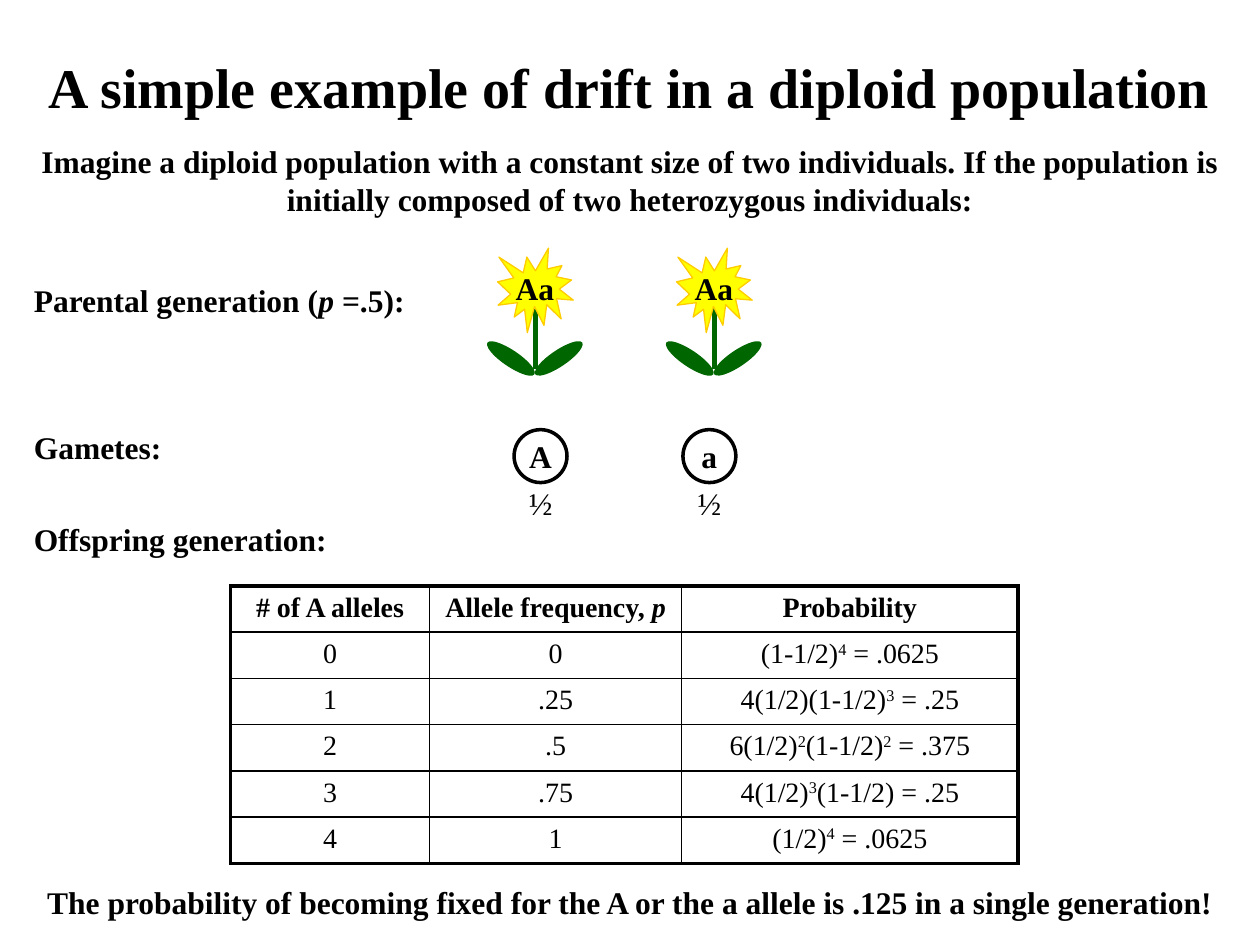
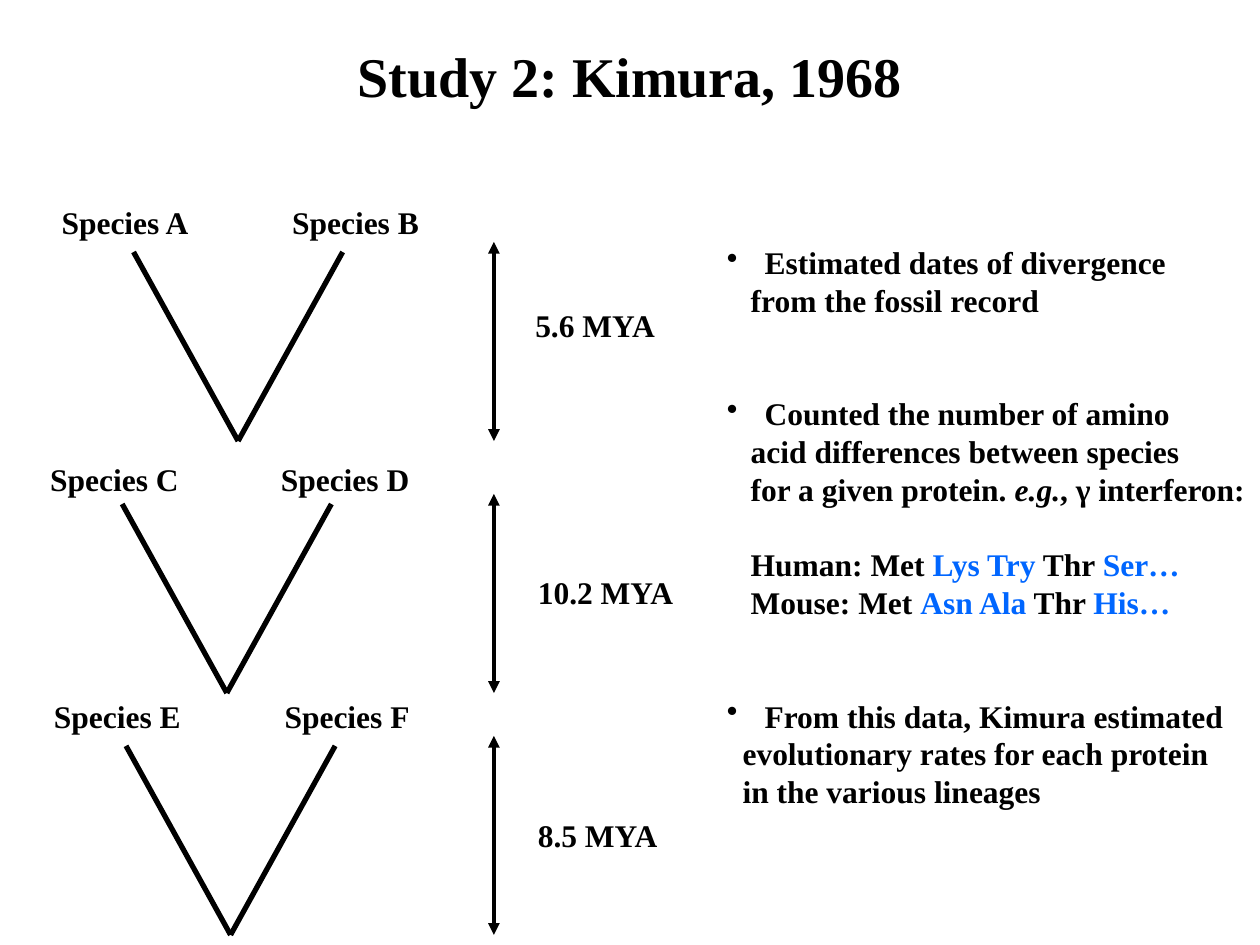
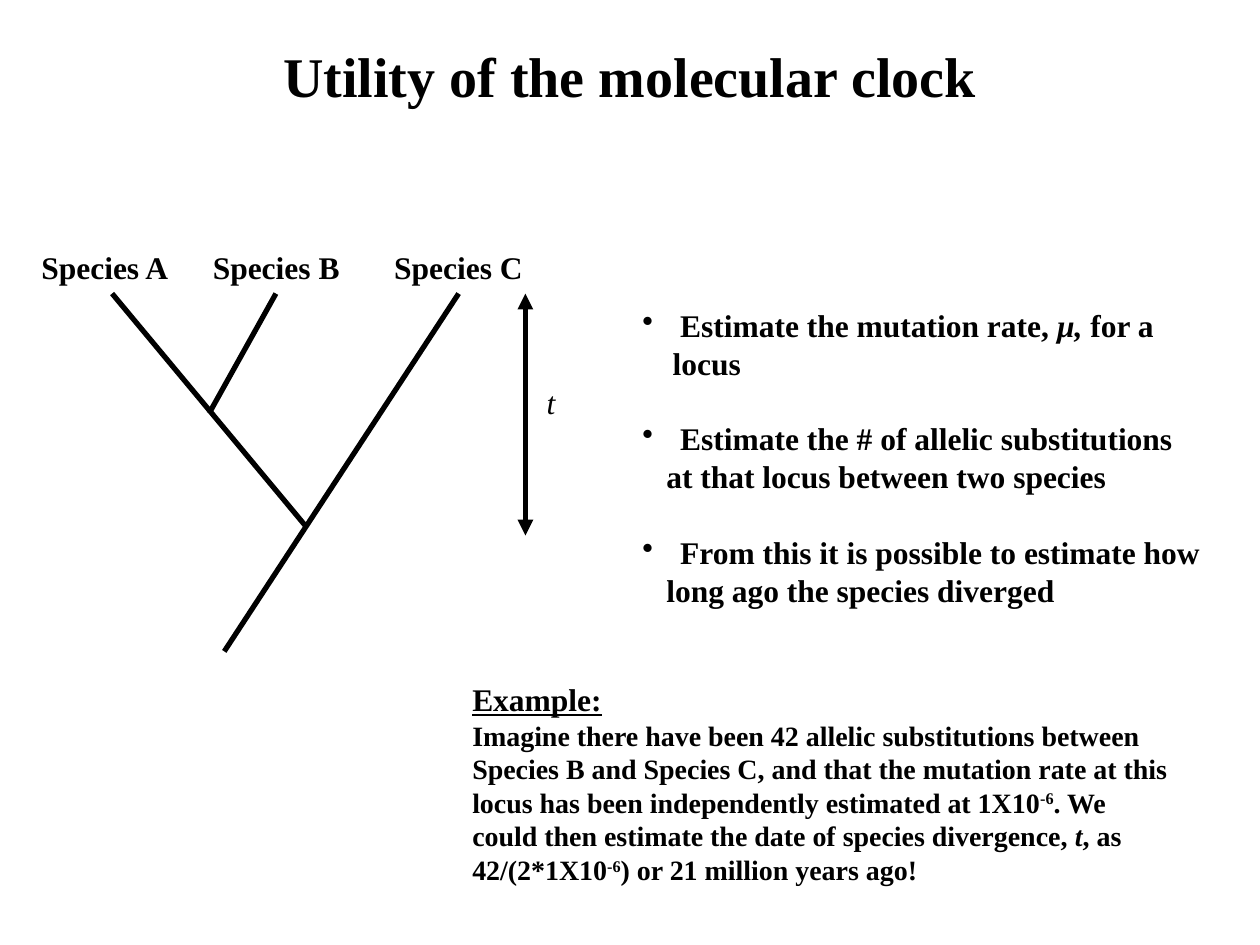
from dataclasses import dataclass

from lxml import etree
from pptx import Presentation
from pptx.dml.color import RGBColor
from pptx.enum.shapes import MSO_CONNECTOR, MSO_SHAPE
from pptx.enum.text import MSO_ANCHOR, PP_ALIGN
from pptx.oxml.ns import qn
from pptx.util import Inches, Pt

LEFT, CENTER = PP_ALIGN.LEFT, PP_ALIGN.CENTER
MIDDLE = MSO_ANCHOR.MIDDLE
OVAL, BURST = MSO_SHAPE.OVAL, MSO_SHAPE.EXPLOSION1
STRAIGHT = MSO_CONNECTOR.STRAIGHT

COLORS = {
    "ink": "000000",
    "highlight": "0066FF",
    "leaf": "006600",
    "petal": "FFFF00",
    "petal edge": "FFCC00",
}
FONT = "Times New Roman"
COLUMNS, ROWS = 100, 75
CELL = Inches(0.1)
POINTS_PER_CELL = 7.2
LINE_HEIGHT = 1.2
BODY, SMALL, TITLE = 18, 16, 32
BLANK_LINE = BODY * LINE_HEIGHT
BULLET_INDENT = 3


def cells(*lengths):
    return [round(length * CELL) for length in lengths]


def rgb(name):
    return RGBColor.from_string(COLORS[name])


@dataclass
class Para:
    """Spans are strings, or (text, mark) with mark italic, super, underline or highlight."""

    spans: list
    size: int = BODY
    bullet: bool = False
    margin: float = 0
    gap: float = 0

    def height(self):
        return (self.size * LINE_HEIGHT + self.gap) / POINTS_PER_CELL


def bullet(*spans, gap=0):
    return Para(list(spans), bullet=True, margin=BULLET_INDENT, gap=gap)


def follow(*spans, margin=1.9, gap=0):
    """A line that continues the bullet above it."""
    return Para(list(spans), margin=margin, gap=gap)


class Painter:
    def __init__(self):
        self.deck = Presentation()
        self.deck.slide_width, self.deck.slide_height = cells(COLUMNS, ROWS)
        self.slide = None

    def new_page(self, title, top=2.8):
        self.slide = self.deck.slides.add_slide(self.deck.slide_layouts[6])
        self.text(0, top, COLUMNS, [Para([title], TITLE)], align=CENTER)

    def fill_frame(self, frame, paras, bold=True, align=LEFT):
        for index, para in enumerate(paras):
            line = frame.paragraphs[0] if index == 0 else frame.add_paragraph()
            line.alignment = align
            line.space_before = Pt(para.gap)
            properties = line._p.get_or_add_pPr()
            indent = para.margin if para.bullet else 0
            margin, first = cells(para.margin, -indent)
            properties.set("marL", str(margin))
            properties.set("indent", str(first))
            if para.bullet:
                etree.SubElement(properties, qn("a:buChar")).set("char", "•")
            for span in para.spans:
                self.add_span(line, span, para.size, bold)

    def add_span(self, line, span, size, bold):
        words, mark = (span, None) if isinstance(span, str) else span
        run = line.add_run()
        run.text = words
        font = run.font
        font.name, font.size, font.bold = FONT, Pt(size), bold
        font.color.rgb = rgb("highlight" if mark == "highlight" else "ink")
        font.italic = mark == "italic"
        font.underline = mark == "underline"
        if mark == "super":
            run._r.get_or_add_rPr().set("baseline", "30000")

    def text(self, left, top, width, paras, bold=True, align=LEFT, wrap=True, lines=1):
        height = 1 + lines * sum(para.height() for para in paras)
        box = self.slide.shapes.add_textbox(*cells(left, top, width, height))
        box.text_frame.word_wrap = wrap
        self.fill_frame(box.text_frame, paras, bold, align)

    def label(self, left, top, width, *spans, bold=True, align=LEFT):
        self.text(left, top, width, [Para(list(spans))], bold, align, wrap=False)

    def shape(self, kind, left, top, width, height, fill=None, line=None,
              weight=1, turn=0, caption=None):
        shape = self.slide.shapes.add_shape(kind, *cells(left, top, width, height))
        shape.shadow.inherit = False
        shape.rotation = turn
        if fill:
            shape.fill.solid()
            shape.fill.fore_color.rgb = rgb(fill)
        else:
            shape.fill.background()
        if line:
            shape.line.color.rgb = rgb(line)
            shape.line.width = Pt(weight)
        else:
            shape.line.fill.background()
        if caption:
            frame = shape.text_frame
            frame.margin_left = frame.margin_right = 0
            frame.margin_top = frame.margin_bottom = 0
            frame.word_wrap = False
            frame.vertical_anchor = MIDDLE
            self.fill_frame(frame, [Para([caption])], align=CENTER)

    def line(self, start, end, color="ink", weight=3, arrows=False):
        connector = self.slide.shapes.add_connector(STRAIGHT, *cells(*start, *end))
        connector.line.color.rgb = rgb(color)
        connector.line.width = Pt(weight)
        if arrows:
            outline = connector.line._get_or_add_ln()
            for tag in ("a:headEnd", "a:tailEnd"):
                etree.SubElement(outline, qn(tag)).set("type", "triangle")
        etree.SubElement(connector._element.spPr, qn("a:effectLst"))

    def flower(self, stem, top, genotype):
        for offset, turn in ((-2.6, 304), (1.2, 56)):
            self.shape(OVAL, stem + offset, top + 6.5, 1.3, 4.5, "leaf", turn=turn)
        self.line((stem, top + 3.8), (stem, top + 9.6), "leaf")
        self.shape(BURST, stem - 3, top, 6, 6.7, "petal", "petal edge", 0.75,
                   caption=genotype)

    def gamete(self, left, top, allele):
        size = 4.2
        self.shape(OVAL, left, top, size, size, line="ink", weight=2, caption=allele)
        self.label(left, top + 3.8, size, "½", bold=False, align=CENTER)

    def table(self, left, top, widths, height, rows):
        frame = self.slide.shapes.add_table(
            len(rows), len(widths), *cells(left, top, sum(widths), height))
        table = frame.table
        table.first_row = table.horz_banding = False
        for column, width in zip(table.columns, cells(*widths)):
            column.width = width
        for r, (row, contents) in enumerate(zip(table.rows, rows)):
            row.height = cells(height / len(rows))[0]
            for c, spans in enumerate(contents):
                cell = table.cell(r, c)
                self.fill_frame(cell.text_frame, [Para(spans, SMALL)],
                                bold=r == 0, align=CENTER)
                self.borders(cell, L=c == 0, R=c == len(widths) - 1,
                             T=r == 0, B=r == len(rows) - 1)
                cell.fill.background()

    def borders(self, cell, **outer_sides):
        """Heavy lines on the table's outer sides, thin ones inside."""
        properties = cell._tc.get_or_add_tcPr()
        for side, outer in outer_sides.items():
            border = etree.SubElement(properties, qn(f"a:ln{side}"))
            border.set("w", str(Pt(2.25 if outer else 1)))
            fill = etree.SubElement(border, qn("a:solidFill"))
            etree.SubElement(fill, qn("a:srgbClr")).set("val", COLORS["ink"])


def draw_drift(painter):
    painter.new_page("A simple example of drift in a diploid population", top=3.7)
    painter.text(0, 10.8, COLUMNS, [Para([
        "Imagine a diploid population with a constant size of two individuals. "
        "If the population is initially composed of two heterozygous individuals:"])],
        align=CENTER, lines=2)
    for stem in (42.5, 56.7):
        painter.flower(stem, 19.7, "Aa")
    painter.label(1.7, 21.8, 32.1, "Parental generation (", ("p", "italic"), " =.5):")
    painter.label(1.7, 33.5, 12.2, "Gametes:")
    for left, allele in ((40.8, "A"), (54.2, "a")):
        painter.gamete(left, 34.1, allele)
    painter.label(1.7, 40.8, 25.3, "Offspring generation:")
    painter.table(18.3, 46.5, (15.8, 20, 26.7), 22, [
        [["# of A alleles"], ["Allele frequency, ", ("p", "italic")], ["Probability"]],
        [["0"], ["0"], ["(1-1/2)", ("4", "super"), " = .0625"]],
        [["1"], [".25"], ["4(1/2)(1-1/2)", ("3", "super"), " = .25"]],
        [["2"], [".5"], ["6(1/2)", ("2", "super"), "(1-1/2)", ("2", "super"), " = .375"]],
        [["3"], [".75"], ["4(1/2)", ("3", "super"), "(1-1/2) = .25"]],
        [["4"], ["1"], ["(1/2)", ("4", "super"), " = .0625"]],
    ])
    painter.text(0, 69.6, COLUMNS, [Para([
        "The probability of becoming fixed for the A or the a allele is .125 "
        "in a single generation!"])], align=CENTER)


def draw_kimura(painter):
    painter.new_page("Study 2: Kimura, 1968")
    pairs = (
        ("A", "B", 10.6, 20, 15.6, "5.6 MYA", 41.5, 23.8),
        ("C", "D", 9.7, 40, 36, "10.2 MYA", 41.7, 45),
        ("E", "F", 10, 59.2, 54.8, "8.5 MYA", 41.7, 64.3),
    )
    branch, depth = 8.3, 15
    for first, second, left, top, label_top, age, age_left, age_top in pairs:
        root = (left + branch, top + depth)
        for offset, label_offset, name in ((0, -6.7, first), (2 * branch, 11.6, second)):
            painter.line((left + offset, top), root)
            painter.label(left + label_offset, label_top, 12.2, f"Species {name}")
        painter.line((39.2, top - 0.8), (39.2, top + depth), weight=2.25, arrows=True)
        painter.label(age_left, age_top, 13 if len(age) > 7 else 11.7, age)
    painter.text(56.7, 18.8, 43.3, [
        bullet("Estimated dates of divergence"),
        follow("from the fossil record"),
        bullet("Counted the number of amino", gap=2 * BLANK_LINE),
        follow("acid differences between species"),
        follow("for a given protein. ", ("e.g.", "italic"), ", γ interferon:"),
        follow("Human: Met ", ("Lys Try", "highlight"), " Thr ", ("Ser…", "highlight"),
               gap=BLANK_LINE),
        follow("Mouse: Met ", ("Asn Ala", "highlight"), " Thr ", ("His…", "highlight")),
        bullet("From this data, Kimura estimated", gap=2 * BLANK_LINE),
        follow("evolutionary rates for each protein", margin=1.25),
        follow("in the various lineages", margin=1.25),
    ])


def draw_clock(painter):
    painter.new_page("Utility of the molecular clock")
    tips = 23.3
    for start, end in (((36.4, tips), (17.8, 51.7)),
                       ((8.9, tips), (24.3, 41.8)),
                       ((16.6, 32.8), (21.9, tips))):
        painter.line(start, end)
    for left, name in ((2.3, "A"), (15.9, "B"), (30.3, "C")):
        painter.label(left, 19.2, 12.2, f"Species {name}")
    painter.line((41.7, tips), (41.7, 42.5), arrows=True)
    painter.label(42.4, 29.9, 2.7, ("t", "italic"), bold=False)
    painter.text(50, 23.8, 48, [
        bullet("Estimate the mutation rate, ", ("μ, ", "italic"), "for a"),
        follow("locus", margin=2.4),
        bullet("Estimate the # of allelic substitutions", gap=BLANK_LINE),
        follow("at that locus between two species"),
        bullet("From this it is possible to estimate how", gap=BLANK_LINE),
        follow("long ago the species diverged"),
    ])
    example = (
        ["Imagine there have been 42 allelic substitutions between"],
        ["Species B and Species C, and that the mutation rate at this"],
        ["locus has been independently estimated at 1X10", ("-6", "super"), ". We"],
        ["could then estimate the date of species divergence, ", ("t", "italic"), ", as"],
        ["42/(2*1X10", ("-6", "super"), ") or 21 million years ago!"],
    )
    painter.text(36.5, 53.5, 61.7, [Para([("Example:", "underline")])]
                 + [Para(spans, SMALL) for spans in example])


def main():
    painter = Painter()
    for draw in (draw_drift, draw_kimura, draw_clock):
        draw(painter)
    painter.deck.save("out.pptx")


if __name__ == "__main__":
    main()
